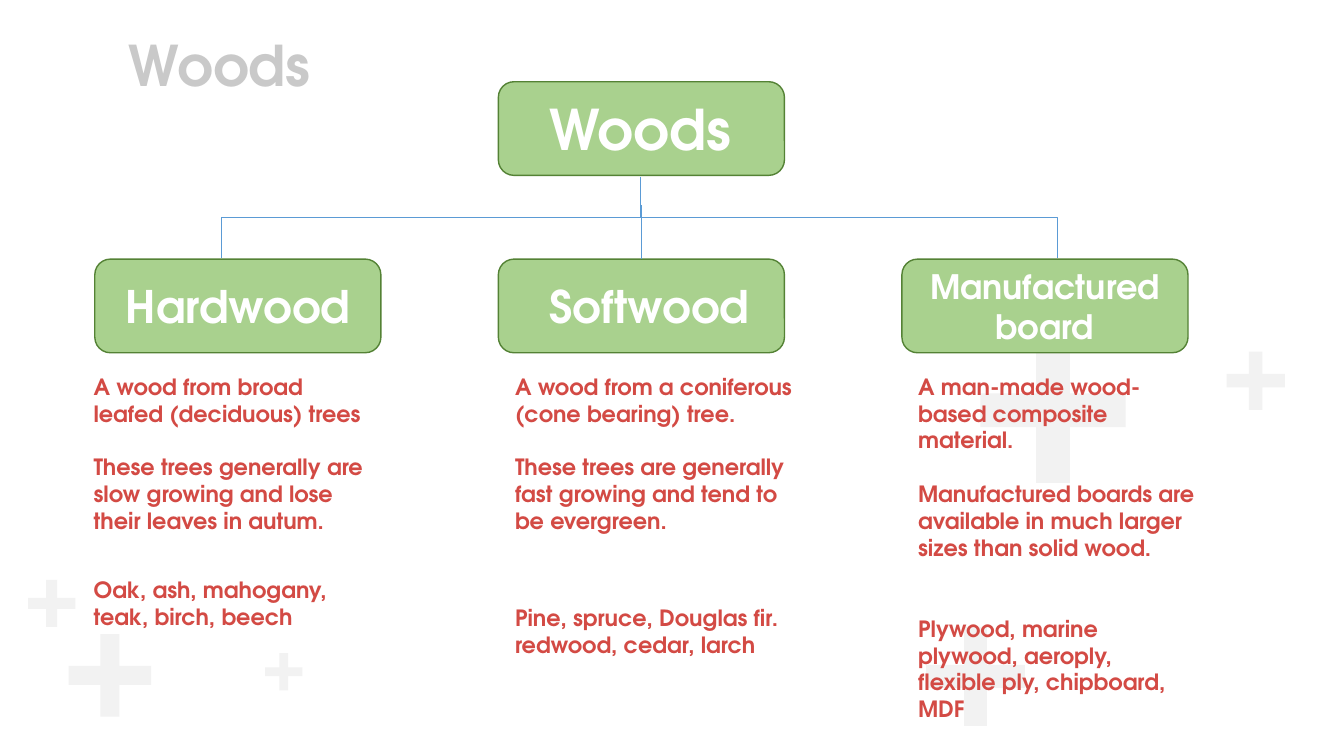
from dataclasses import dataclass

from lxml import etree
from pptx import Presentation
from pptx.dml.color import RGBColor
from pptx.enum.shapes import MSO_CONNECTOR, MSO_SHAPE
from pptx.enum.text import MSO_ANCHOR, MSO_AUTO_SIZE, PP_ALIGN
from pptx.oxml.ns import qn
from pptx.util import Cm, Pt

PLUS = MSO_SHAPE.CROSS
ROUNDED = MSO_SHAPE.ROUNDED_RECTANGLE
BRACE = MSO_SHAPE.RIGHT_BRACE
STRAIGHT = MSO_CONNECTOR.STRAIGHT
LEFT = PP_ALIGN.LEFT
CENTER = PP_ALIGN.CENTER
MIDDLE = MSO_ANCHOR.MIDDLE
FIT_SHAPE = MSO_AUTO_SIZE.SHAPE_TO_FIT_TEXT
TOP_SIDE = 0


@dataclass(frozen=True)
class Theme:
    font: str = "TeX Gyre Adventor"
    title: RGBColor = RGBColor(0xC9, 0xC9, 0xC9)
    label: RGBColor = RGBColor(0xFF, 0xFF, 0xFF)
    body: RGBColor = RGBColor(0xD3, 0x4A, 0x44)
    box_fill: RGBColor = RGBColor(0xA9, 0xD1, 0x8E)
    box_line: RGBColor = RGBColor(0x54, 0x82, 0x35)
    branch: RGBColor = RGBColor(0x5B, 0x9B, 0xD5)
    plus: RGBColor = RGBColor(0xF2, 0xF2, 0xF2)
    title_size: int = 40
    kind_size: int = 32
    long_kind_size: int = 24
    body_size: int = 16
    body_gap: float = 19.2


@dataclass(frozen=True)
class Plus:
    left: float
    top: float
    size: float


@dataclass(frozen=True)
class Label:
    text: str
    size: int
    indent: float = 0.25
    align: PP_ALIGN = LEFT


@dataclass(frozen=True)
class Wood:
    label: Label
    body_left: float
    facts: tuple[str, ...]
    facts_height: float
    examples: str
    examples_top: float
    examples_height: float


THEME = Theme()
BOX_WIDTH, BOX_HEIGHT = 7.21, 2.36
FIRST_LEFT, COLUMN_STEP = 2.39, 10.17
ROOT_TOP, KIND_TOP = 2.06, 6.53
FACTS_TOP, BODY_WIDTH = 9.27, 7.49

PLUSES = (
    Plus(24.71, 8.51, 3.66),
    Plus(23.34, 15.8, 2.49),
    Plus(1.73, 15.98, 2.08),
    Plus(30.91, 8.86, 1.47),
    Plus(0.71, 14.61, 1.19),
    Plus(6.68, 16.46, 0.94),
)

ROOT = Label("Woods", THEME.title_size, 1.17)

WOODS = (
    Wood(
        Label("Hardwood", THEME.kind_size, 0.66),
        2.11,
        ("A wood from broad leafed (deciduous) trees",
         "These trees generally are slow growing and lose their leaves in autum."),
        4.37,
        "Oak, ash, mahogany, teak, birch, beech", 14.4, 1.63,
    ),
    Wood(
        Label("Softwood", THEME.kind_size, 1.17),
        12.73,
        ("A wood from a coniferous (cone bearing) tree.",
         "These trees are generally fast growing and tend to be evergreen."),
        5.05,
        "Pine, spruce, Douglas fir. redwood, cedar, larch", 15.09, 1.63,
    ),
    Wood(
        Label("Manufactured board", THEME.long_kind_size, align=CENTER),
        22.89,
        ("A man-made wood-based composite material.",
         "Manufactured boards are available in much larger sizes than solid wood."),
        5.74,
        "Plywood, marine plywood, aeroply, flexible ply, chipboard, MDF", 15.37, 3.0,
    ),
)


def write(frame, texts: tuple[str, ...], size: int, color: RGBColor,
          align: PP_ALIGN = LEFT) -> None:
    frame.word_wrap = True
    for index, text in enumerate(texts):
        para = frame.add_paragraph() if index else frame.paragraphs[0]
        para.text = text
        para.alignment = align
        if index:
            para.space_before = Pt(THEME.body_gap)
        para.font.name = THEME.font
        para.font.size = Pt(size)
        para.font.bold = True
        para.font.color.rgb = color


def add_text(page, left: float, top: float, width: float, height: float,
             texts: tuple[str, ...], size: int, color: RGBColor) -> None:
    box = page.shapes.add_textbox(Cm(left), Cm(top), Cm(width), Cm(height))
    write(box.text_frame, texts, size, color)
    box.text_frame.auto_size = FIT_SHAPE


def add_plus(page, plus: Plus) -> None:
    shape = page.shapes.add_shape(
        PLUS, Cm(plus.left), Cm(plus.top), Cm(plus.size), Cm(plus.size))
    shape.adjustments[0] = 0.384
    shape.shadow.inherit = False
    shape.fill.solid()
    shape.fill.fore_color.rgb = THEME.plus
    shape.line.fill.background()


def add_box(page, column: int, top: float, label: Label):
    box = page.shapes.add_shape(
        ROUNDED, Cm(FIRST_LEFT + column * COLUMN_STEP), Cm(top),
        Cm(BOX_WIDTH), Cm(BOX_HEIGHT))
    box.shadow.inherit = False
    box.fill.solid()
    box.fill.fore_color.rgb = THEME.box_fill
    box.line.color.rgb = THEME.box_line
    box.line.width = Pt(1)
    frame = box.text_frame
    frame.margin_left = Cm(label.indent)
    frame.vertical_anchor = MIDDLE
    write(frame, (label.text,), label.size, THEME.label, label.align)
    return box


def style_branch(line) -> None:
    line.color.rgb = THEME.branch
    line.width = Pt(0.5)


def add_branches(page, middle_box) -> None:
    brace = page.shapes.add_shape(BRACE, Cm(15.09), Cm(-5.05), Cm(2.03), Cm(21.06))
    brace.rotation = 270
    brace.adjustments[0] = 0
    brace.adjustments[1] = 0.502
    brace.shadow.inherit = False
    brace.fill.background()
    style_branch(brace.line)

    center = middle_box.left + middle_box.width // 2
    stem = page.shapes.add_connector(
        STRAIGHT, center, Cm(5.16), center, middle_box.top)
    stem.end_connect(middle_box, TOP_SIDE)
    style_branch(stem.line)
    etree.SubElement(stem._element.spPr, qn("a:effectLst"))


def main() -> None:
    deck = Presentation()
    deck.slide_width, deck.slide_height = Cm(33.87), Cm(19.05)
    page = deck.slides.add_slide(deck.slide_layouts[6])

    for plus in PLUSES:
        add_plus(page, plus)
    add_text(page, 3.0, 0.64, 26.31, 1.96, ("Woods",), THEME.title_size, THEME.title)

    add_box(page, 1, ROOT_TOP, ROOT)
    kind_boxes = [add_box(page, column, KIND_TOP, wood.label)
                  for column, wood in enumerate(WOODS)]
    add_branches(page, kind_boxes[1])

    for wood in WOODS:
        add_text(page, wood.body_left, FACTS_TOP, BODY_WIDTH, wood.facts_height,
                 wood.facts, THEME.body_size, THEME.body)
        add_text(page, wood.body_left, wood.examples_top, BODY_WIDTH,
                 wood.examples_height, (wood.examples,), THEME.body_size, THEME.body)

    deck.save("out.pptx")


if __name__ == "__main__":
    main()
